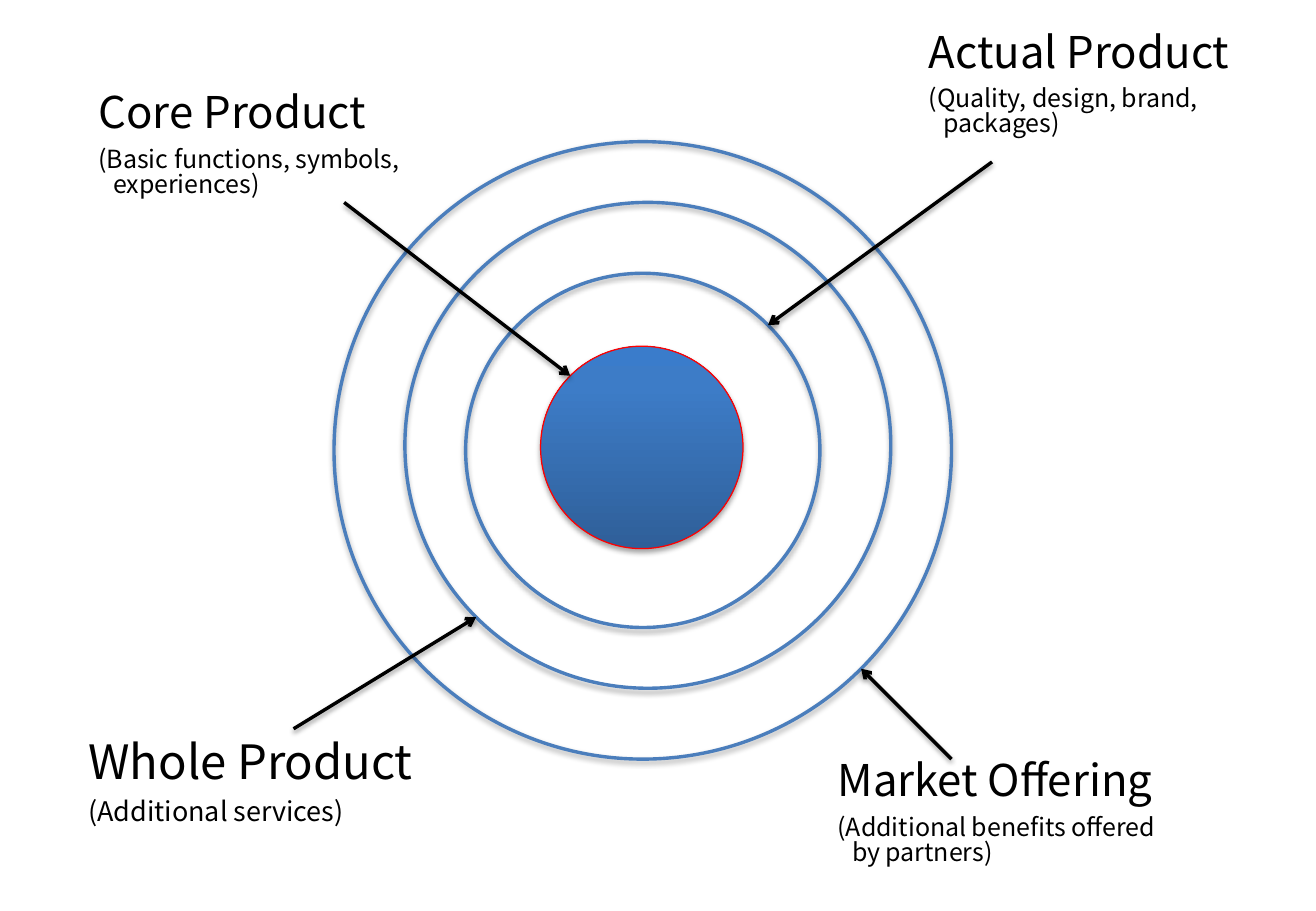
from copy import deepcopy
from math import sqrt

from lxml import etree
from pptx import Presentation
from pptx.dml.color import RGBColor
from pptx.enum.shapes import MSO_CONNECTOR as Connector, MSO_SHAPE as Shape
from pptx.oxml.ns import qn
from pptx.util import Pt

FONT = "Noto Sans CJK KR"
BLACK = RGBColor(0, 0, 0)
RED = RGBColor(0xFF, 0, 0)
RING_BLUE = RGBColor(0x4B, 0x7E, 0xBC)
CORE_DARK = RGBColor(0x2F, 0x5F, 0x99)
CORE_MIDDLE = RGBColor(0x3D, 0x7C, 0xC7)
CORE_LIGHT = RGBColor(0x3A, 0x7C, 0xCB)

LAYERS = [
    dict(circle=(320.4, 205.2, 120), corner=(-1, -1), start=(204, 120),
         label=(54, 54), title="Core Product", sizes=(25.9, 14.8),
         detail="(Basic functions, symbols,\vexperiences)"),
    dict(circle=(276, 162, 210), corner=(1, -1), start=(588, 96),
         label=(546, 18), title="Actual Product", sizes=(25.9, 14.8),
         detail="(Quality, design, brand,\vpackages)"),
    dict(circle=(240, 120, 288), corner=(-1, 1), start=(174, 432),
         label=(48, 438), title="Whole Product", sizes=(28, 16),
         detail="(Additional services)"),
    dict(circle=(198, 84, 366), corner=(1, 1), start=(564, 450),
         label=(492, 450), title="Market Offering", sizes=(25.9, 14.8),
         detail="(Additional benefits offered\vby partners)"),
]


def add_shadow(shape, opacity):
    properties = shape._element.spPr
    effects = properties.find(qn("a:effectLst"))
    if effects is None:
        effects = etree.SubElement(properties, qn("a:effectLst"))
    shadow = etree.SubElement(effects, qn("a:outerShdw"), blurRad=str(Pt(3.1)),
                              dist=str(Pt(1.7)), dir="5400000", rotWithShape="0")
    color = etree.SubElement(shadow, qn("a:srgbClr"), val=str(BLACK))
    etree.SubElement(color, qn("a:alpha"), val=str(opacity * 1000))


def fill_core(shape):
    shape.fill.gradient()
    shape.fill.gradient_angle = 90
    stops = shape.fill._fill._gradFill.find(qn("a:gsLst"))
    stops.insert(1, deepcopy(stops[0]))
    settings = [(0, CORE_DARK), (0.8, CORE_MIDDLE), (1, CORE_LIGHT)]
    for stop, (position, color) in zip(shape.fill.gradient_stops, settings):
        stop.position = position
        stop.color.rgb = color


def add_circle(slide, left, top, diameter, is_core):
    circle = slide.shapes.add_shape(Shape.OVAL, Pt(left), Pt(top), Pt(diameter), Pt(diameter))
    if is_core:
        fill_core(circle)
    else:
        circle.fill.background()
    circle.line.color.rgb = RED if is_core else RING_BLUE
    circle.line.width = Pt(0.75 if is_core else 2)
    circle.shadow.inherit = False
    add_shadow(circle, 35)


def add_arrow(slide, start, circle, corner):
    left, top, diameter = circle
    radius = diameter / 2
    end_x = left + radius + corner[0] * radius / sqrt(2)
    end_y = top + radius + corner[1] * radius / sqrt(2)
    arrow = slide.shapes.add_connector(Connector.STRAIGHT, Pt(start[0]), Pt(start[1]),
                                       Pt(end_x), Pt(end_y))
    arrow.line.color.rgb = BLACK
    arrow.line.width = Pt(2)
    etree.SubElement(arrow.line._get_or_add_ln(), qn("a:tailEnd"), type="arrow")
    add_shadow(arrow, 38)


def add_label(slide, left, top, title, detail, sizes):
    frame = slide.shapes.add_textbox(Pt(left), Pt(top), Pt(220), Pt(66)).text_frame
    frame.word_wrap = True
    frame.margin_left = frame.margin_right = frame.margin_top = frame.margin_bottom = 0
    frame.text = f"{title}\n{detail}"
    for paragraph, size, spacing, before in zip(frame.paragraphs, sizes, (0.9, 0.83), (0, 6)):
        paragraph.line_spacing = spacing
        paragraph.space_before = Pt(before)
        properties = paragraph._p.get_or_add_pPr()
        properties.set("marL", str(Pt(13)))
        properties.set("indent", str(Pt(-8.6)))
        for run in paragraph.runs:
            run.font.name = FONT
            run.font.size = Pt(size)
            run.font.color.rgb = BLACK


def build_product_layers(slide):
    for index, layer in enumerate(LAYERS):
        add_circle(slide, *layer["circle"], is_core=index == 0)
    for layer in LAYERS:
        add_arrow(slide, layer["start"], layer["circle"], layer["corner"])
        add_label(slide, *layer["label"], layer["title"], layer["detail"], layer["sizes"])


def main():
    presentation = Presentation()
    presentation.slide_width = Pt(780)
    presentation.slide_height = Pt(540)
    slide = presentation.slides.add_slide(presentation.slide_layouts[6])
    build_product_layers(slide)
    presentation.save("out.pptx")


if __name__ == "__main__":
    main()
